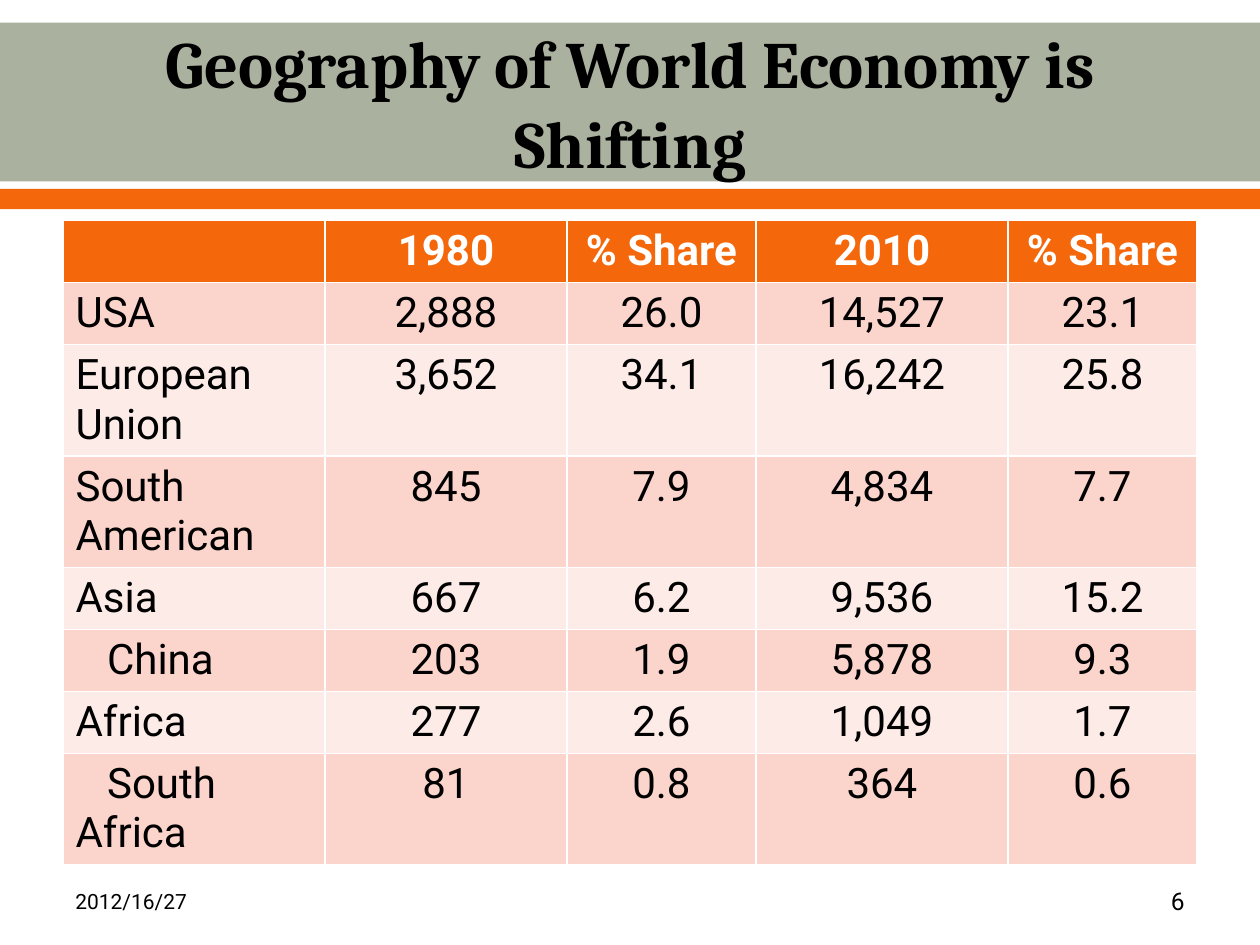
"""Build a slide with a table of regional shares of the world economy."""
import pptx
import pptx.dml.color
import pptx.enum.shapes
import pptx.enum.text
import pptx.util

Inches = pptx.util.Inches
RGBColor = pptx.dml.color.RGBColor
ALIGN = pptx.enum.text.PP_ALIGN
MIDDLE = pptx.enum.text.MSO_ANCHOR.MIDDLE

BLACK = RGBColor(0x00, 0x00, 0x00)
WHITE = RGBColor(0xFF, 0xFF, 0xFF)
SAGE = RGBColor(0xAB, 0xB1, 0x9F)
ORANGE = RGBColor(0xF4, 0x68, 0x0B)
BAND_COLORS = [RGBColor(0xFD, 0xEB, 0xE7), RGBColor(0xFB, 0xD4, 0xCC)]

COLUMN_WIDTHS = [2.08, 1.92, 1.5, 2, 1.5]
ROW_HEIGHT = 0.41
ROWS = [
    ["", "1980", "% Share", "2010", "% Share"],
    ["USA", "2,888", "26.0", "14,527", "23.1"],
    ["European Union", "3,652", "34.1", "16,242", "25.8"],
    ["South American", "845", "7.9", "4,834", "7.7"],
    ["Asia", "667", "6.2", "9,536", "15.2"],
    ["China", "203", "1.9", "5,878", "9.3"],
    ["Africa", "277", "2.6", "1,049", "1.7"],
    ["South Africa", "81", "0.8", "364", "0.6"],
]
INDENTED_REGIONS = {"China", "South Africa"}


def write_text(frame, text, align, color, **font_values):
    """Fill the first paragraph of a text frame with one formatted span."""
    para = frame.paragraphs[0]
    para.alignment = align
    span = para.add_run()
    span.text = text
    span.font.color.rgb = color
    for name, value in font_values.items():
        setattr(span.font, name, value)
    return para


deck = pptx.Presentation()
deck.slide_width, deck.slide_height = Inches(10), Inches(7.5)
page = deck.slides.add_slide(deck.slide_layouts[5])

for top, height, color in [(0.18, 1.26, SAGE), (1.5, 0.16, ORANGE)]:
    band = page.shapes.add_shape(
        pptx.enum.shapes.MSO_SHAPE.RECTANGLE,
        Inches(0), Inches(top), Inches(10), Inches(height))
    band.shadow.inherit = False
    band.fill.solid()
    band.fill.fore_color.rgb = color
    band.line.fill.background()

title = page.shapes.title
page.shapes._spTree.append(title._element)
title_place = {"left": 0.5, "top": 0.2, "width": 9, "height": 1.22}
for name, value in title_place.items():
    setattr(title, name, Inches(value))
title_format = {
    "word_wrap": True,
    "auto_size": pptx.enum.text.MSO_AUTO_SIZE.NONE,
    "vertical_anchor": MIDDLE,
}
for name, value in title_format.items():
    setattr(title.text_frame, name, value)
write_text(title.text_frame, "Geography of World Economy is Shifting",
           ALIGN.CENTER, BLACK, name="Cambria", size=pptx.util.Pt(37.8), bold=True)

table = page.shapes.add_table(
    len(ROWS), len(COLUMN_WIDTHS), Inches(0.5), Inches(1.75),
    Inches(sum(COLUMN_WIDTHS)), Inches(ROW_HEIGHT * len(ROWS))).table
for column, width in zip(table.columns, COLUMN_WIDTHS):
    column.width = Inches(width)

for row_index, values in enumerate(ROWS):
    table.rows[row_index].height = Inches(ROW_HEIGHT)
    is_header = row_index == 0
    for column_index, text in enumerate(values):
        cell = table.cell(row_index, column_index)
        cell.fill.solid()
        cell.fill.fore_color.rgb = ORANGE if is_header else BAND_COLORS[row_index % 2]
        if not text:
            continue
        para = write_text(
            cell.text_frame, text, ALIGN.CENTER if column_index else ALIGN.LEFT,
            WHITE if is_header else BLACK,
            name="Roboto", size=pptx.util.Pt(24), bold=is_header)
        if text in INDENTED_REGIONS:
            para._p.get_or_add_pPr().set("indent", str(Inches(0.25)))

for left, text, align, size in [(0.5, "2012/16/27", ALIGN.LEFT, 12),
                                (7.17, "6", ALIGN.RIGHT, 14)]:
    box = page.shapes.add_textbox(Inches(left), Inches(6.95), Inches(2.33), Inches(0.4))
    box.text_frame.word_wrap = True
    box.text_frame.vertical_anchor = MIDDLE
    write_text(box.text_frame, text, align, BLACK,
               name="Roboto", size=pptx.util.Pt(size))

deck.save("out.pptx")
